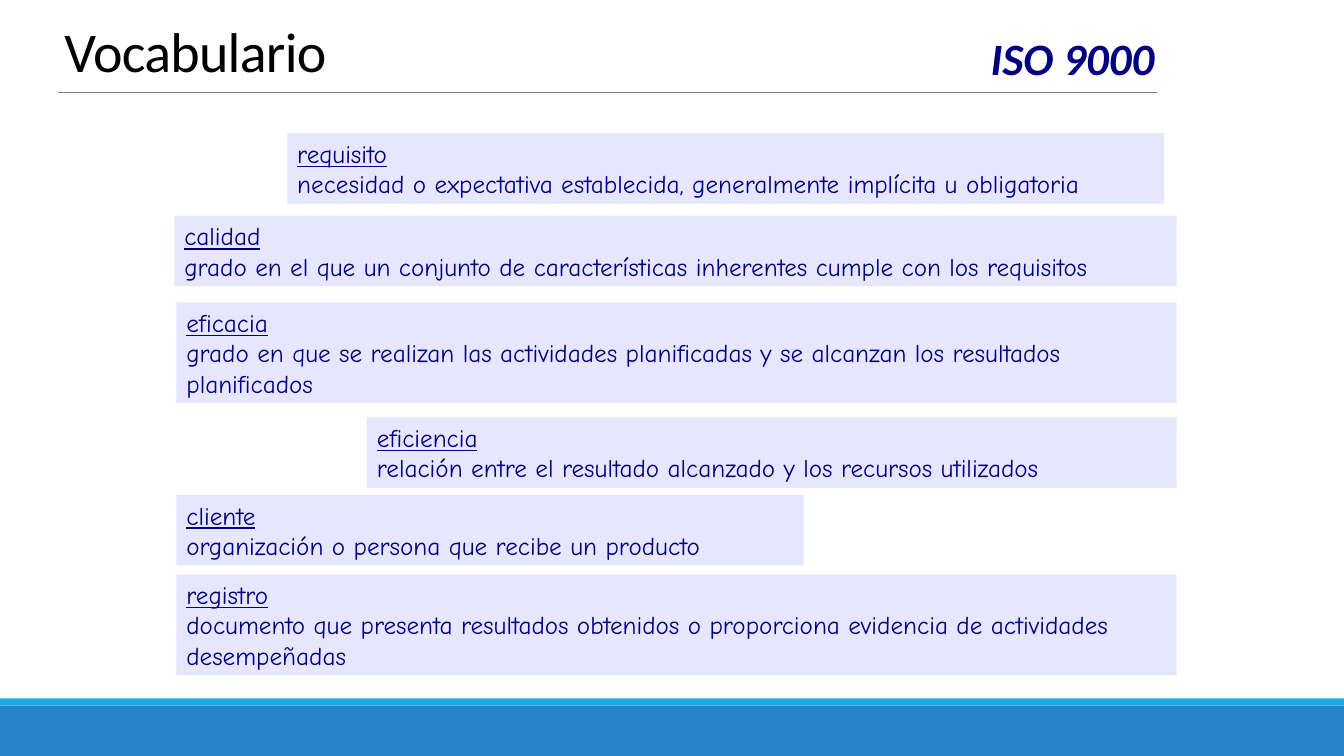
from lxml import etree
from pptx import Presentation
from pptx.dml.color import RGBColor
from pptx.enum import shapes, text
from pptx.oxml import ns
from pptx.util import Inches, Pt

COLORS = {
    "navy": "000080",
    "lavender": "E6E6FF",
    "blue": "2683C6",
    "cyan": "1CADE4",
    "gray": "808080",
    "black": "000000",
}

deck = Presentation()
deck.slide_width, deck.slide_height = Inches(13.33), Inches(7.5)
slide = deck.slides.add_slide(deck.slide_layouts[6])


def add_bar(left, top, width, height, color):
    bar = slide.shapes.add_shape(
        shapes.MSO_SHAPE.RECTANGLE,
        Inches(left), Inches(top), Inches(width), Inches(height))
    bar.shadow.inherit = False
    bar.fill.solid()
    bar.fill.fore_color.rgb = RGBColor.from_string(COLORS[color])
    bar.line.fill.background()
    return bar


def write(paragraph, words, size=18, font="Comic Neue", color="navy",
          bold=False, italic=False, underline=False,
          align=text.PP_ALIGN.LEFT):
    paragraph.alignment = align
    run = paragraph.add_run()
    run.text = words
    run.font.size, run.font.name = Pt(size), font
    run.font.bold, run.font.italic = bold, italic
    run.font.underline = underline
    run.font.color.rgb = RGBColor.from_string(COLORS[color])
    return run


# Footer bands
add_bar(0, 7, 13.33, 0.5, "blue")
add_bar(0, 6.93, 13.33, 0.07, "cyan")

# Rule under the heading
rule = slide.shapes.add_connector(
    shapes.MSO_CONNECTOR.STRAIGHT,
    Inches(0.58), Inches(0.92), Inches(11.48), Inches(0.92))
rule.line.color.rgb = RGBColor.from_string(COLORS["gray"])
rule.line.width = Pt(0.5)
etree.SubElement(rule._element.spPr, ns.qn("a:effectLst"))

# Standard's name
standard = slide.shapes.add_textbox(
    Inches(3.82), Inches(0.26), Inches(7.73), Inches(1.06)).text_frame
standard.word_wrap = True
write(standard.paragraphs[0], "ISO 9000", size=32, font="Calibri",
      bold=True, italic=True, align=text.PP_ALIGN.RIGHT)

# Definitions: left, top, width, height, term, meaning
definitions = [
    (2.85, 1.32, 8.7, 0.7, "requisito",
     "necesidad o expectativa establecida, generalmente implícita u obligatoria"),
    (1.73, 2.14, 9.94, 0.7, "calidad",
     "grado en el que un conjunto de características inherentes cumple con los requisitos"),
    (1.75, 3, 9.92, 1, "eficacia",
     "grado en que se realizan las actividades planificadas y se alcanzan los resultados planificados"),
    (3.64, 4.14, 8.03, 0.7, "eficiencia",
     "relación entre el resultado alcanzado y los recursos utilizados"),
    (1.75, 4.91, 6.22, 0.7, "cliente",
     "organización o persona que recibe un producto"),
    (1.75, 5.7, 9.92, 1, "registro",
     "documento que presenta resultados obtenidos o proporciona evidencia de actividades desempeñadas"),
]
for left, top, width, height, term, meaning in definitions:
    entry = add_bar(left, top, width, height, "lavender").text_frame
    entry.word_wrap = True
    entry.vertical_anchor = text.MSO_ANCHOR.TOP
    write(entry.paragraphs[0], term, underline=True)
    write(entry.add_paragraph(), meaning)

# Heading
heading = slide.shapes.add_textbox(
    Inches(0.54), Inches(0.03), Inches(11), Inches(0.85)).text_frame
heading.word_wrap = True
heading.vertical_anchor = text.MSO_ANCHOR.BOTTOM
heading.paragraphs[0].line_spacing = 0.85
title = write(heading.paragraphs[0], "Vocabulario", size=40, font="Calibri",
              color="black")
title._r.get_or_add_rPr().set("spc", "-50")

deck.save("out.pptx")
